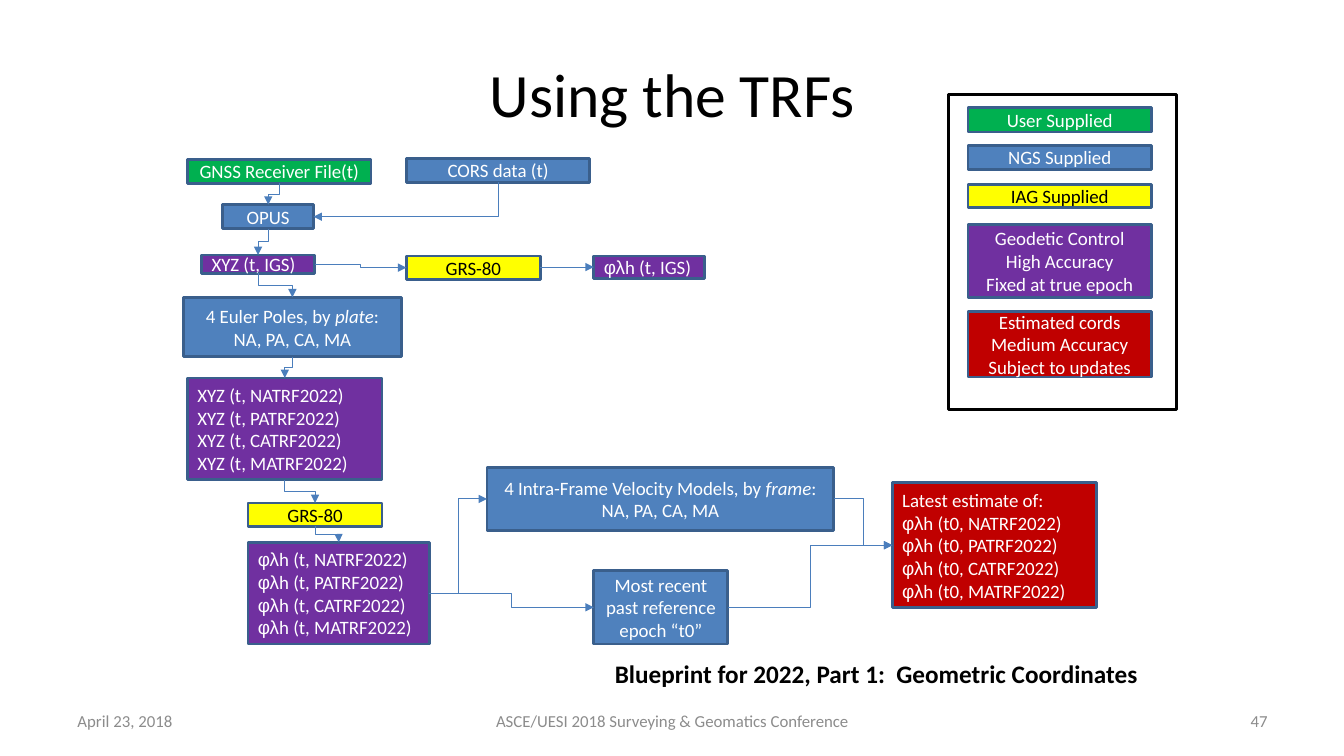
from lxml.etree import SubElement
from pptx import Presentation
from pptx.dml.color import RGBColor
from pptx.enum.shapes import MSO_CONNECTOR as Link, MSO_SHAPE as Shape
from pptx.enum.text import MSO_ANCHOR as Anchor, PP_ALIGN as Align
from pptx.oxml.ns import qn
from pptx.util import Inches, Pt

GREEN = RGBColor(0x00, 0xB0, 0x50)
BLUE = RGBColor(0x4F, 0x81, 0xBD)
YELLOW = RGBColor(0xFF, 0xFF, 0x00)
PURPLE = RGBColor(0x70, 0x30, 0xA0)
RED = RGBColor(0xC0, 0x00, 0x00)
EDGE = RGBColor(0x3A, 0x5F, 0x8C)
ARROW = RGBColor(0x4B, 0x7E, 0xBC)
GREY = RGBColor(0x8C, 0x8C, 0x8C)
BLACK = RGBColor(0x00, 0x00, 0x00)
WHITE = RGBColor(0xFF, 0xFF, 0xFF)

GREEK = "φλ"
ITALIC = ("plate", "frame")
FRAMES = ("NATRF2022", "PATRF2022", "CATRF2022", "MATRF2022")
PLATES = "NA, PA, CA, MA"

# Columns shared by several boxes, in inches
COL_A, COL_B, COL_C, COL_D = 1.86, 2.46, 4.03, 5.89
LEGEND_COL, WIDE, NARROW = 9.6, 1.82, 1.33

# name: (left, top, width, height), fill, alignment, lines ("|" parts the runs)
BOXES = {
    "receiver": ((COL_A, 1.58, WIDE, 0.24), GREEN, Align.CENTER, ["GNSS Receiver File(t)"]),
    "opus": ((2.21, 2.03, 0.9, 0.24), BLUE, Align.CENTER, ["OPUS"]),
    "xyz igs": ((2, 2.53, 1.12, 0.18), PURPLE, Align.LEFT, ["XYZ (t, IGS)"]),
    "cors": ((COL_C, 1.57, WIDE, 0.24), BLUE, Align.CENTER, ["CORS data (t)"]),
    "euler": ((1.82, 2.95, 2.16, 0.59), BLUE, Align.CENTER,
              ["4 Euler Poles, by |plate|:", PLATES]),
    "xyz frames": ((COL_A, 3.75, 1.93, 1.01), PURPLE, Align.LEFT,
                   [f"XYZ (t, {frame})" for frame in FRAMES]),
    "grs igs": ((COL_C, 2.54, NARROW, 0.23), YELLOW, Align.CENTER, ["GRS-80"]),
    "geo igs": ((COL_D, 2.54, 1.1, 0.22), PURPLE, Align.LEFT, ["φλ|h (t, IGS)"]),
    "grs frames": ((COL_B, 4.99, NARROW, 0.23), YELLOW, Align.CENTER, ["GRS-80"]),
    "latest": ((8.85, 4.79, 2.03, 1.24), RED, Align.LEFT,
               ["Latest estimate of:"] + [f"φλ|h (t0, {frame})" for frame in FRAMES]),
    "velocity": ((4.83, 4.64, 3.44, 0.62), BLUE, Align.CENTER,
                 ["4 Intra-Frame Velocity Models, by |frame|:", PLATES]),
    "geo frames": ((COL_B, 5.38, 1.8, 1.01), PURPLE, Align.LEFT,
                   [f"φλ|h (t, {frame})" for frame in FRAMES]),
    "epoch": ((COL_D, 5.66, NARROW, 0.73), BLUE, Align.CENTER,
              ["Most recent past reference epoch “t0”"]),
}

# top, height, fill, lines
LEGEND = [
    (1.07, 0.24, GREEN, ["User Supplied"]),
    (1.44, 0.24, BLUE, ["NGS Supplied"]),
    (1.83, 0.23, YELLOW, ["IAG Supplied"]),
    (2.23, 0.72, PURPLE, ["Geodetic Control", "High Accuracy", "Fixed at true epoch"]),
    (3.09, 0.65, RED, ["Estimated cords", "Medium Accuracy", "Subject to updates"]),
]
LEGEND_FRAME = (9.41, 0.94, 2.26, 3.12)

DOWN_LINKS = [("receiver", "opus"), ("opus", "xyz igs"), ("xyz igs", "euler"),
              ("euler", "xyz frames"), ("xyz frames", "grs frames"),
              ("grs frames", "geo frames")]
ACROSS_LINKS = [("xyz igs", "grs igs"), ("grs igs", "geo igs"),
                ("geo frames", "velocity"), ("geo frames", "epoch"),
                ("velocity", "latest"), ("epoch", "latest")]

# place, text, size, colour, alignment, bold, anchor, wrap
CAPTIONS = [
    ((0.67, 0.3, 12, 1.25), "Using the TRFs", 44, BLACK, Align.CENTER, False, Anchor.MIDDLE, True),
    ((6, 6.48, 5.43, 0.4), "Blueprint for 2022, Part 1:  Geometric Coordinates", 18, BLACK,
     Align.LEFT, True, Anchor.TOP, False),
    ((0.67, 6.95, 3.11, 0.4), "April 23, 2018", 12, GREY, Align.LEFT, False, Anchor.MIDDLE, True),
    ((4.56, 6.95, 4.22, 0.4), "ASCE/UESI 2018 Surveying & Geomatics Conference", 12, GREY,
     Align.CENTER, False, Anchor.MIDDLE, True),
    ((9.56, 6.95, 3.11, 0.4), "47", 12, GREY, Align.RIGHT, False, Anchor.MIDDLE, True),
]

TOP, LEFT, BOTTOM, RIGHT = range(4)  # connection sites of a rectangle

deck = Presentation()
deck.slide_width, deck.slide_height = Inches(13.33), Inches(7.5)
page = deck.slides.add_slide(deck.slide_layouts[6])


def write(box, lines, size, color, align, bold=False, anchor=Anchor.MIDDLE, wrap=True):
    frame = box.text_frame
    frame.word_wrap, frame.vertical_anchor = wrap, anchor
    for index, line in enumerate(lines):
        para = frame.add_paragraph() if index else frame.paragraphs[0]
        para.alignment = align
        para.font.name, para.font.size, para.font.bold = "Calibri", Pt(size), bold
        para.font.color.rgb = color
        for piece in line.split("|"):
            span = para.add_run()
            span.text = piece
            if piece == GREEK:
                span.font.name = "Arial"
            if piece in ITALIC:
                span.font.italic = True


def add_rectangle(place, edge):
    box = page.shapes.add_shape(Shape.RECTANGLE, *map(Inches, place))
    box.shadow.inherit = False
    box.line.color.rgb, box.line.width = edge, Pt(2)
    return box


def add_box(place, fill, align, lines):
    box = add_rectangle(place, EDGE)
    box.fill.solid()
    box.fill.fore_color.rgb = fill
    write(box, lines, 13.5, BLACK if fill == YELLOW else WHITE, align)
    return box


def add_arrow(start, start_site, end, end_site):
    arrow = page.shapes.add_connector(Link.ELBOW, 0, 0, 0, 0)
    arrow.begin_connect(boxes[start], start_site)
    arrow.end_connect(boxes[end], end_site)
    arrow.line.color.rgb, arrow.line.width = ARROW, Pt(0.75)
    properties = arrow._element.spPr
    SubElement(properties.find(qn("a:ln")), qn("a:tailEnd"), type="triangle")
    SubElement(properties, qn("a:effectLst"))
    if start_site == BOTTOM:  # a downward elbow is a sideways one, turned
        run, drop = arrow.end_x - arrow.begin_x, arrow.end_y - arrow.begin_y
        middle_x, middle_y = arrow.begin_x + run // 2, arrow.begin_y + drop // 2
        arrow.width, arrow.height = drop, abs(run)
        arrow.left, arrow.top = middle_x - drop // 2, middle_y - abs(run) // 2
        turn = properties.find(qn("a:xfrm"))
        turn.set("rot", str((270 if run > 0 else 90) * 60000))
        turn.set("flipH", "1" if run > 0 else "0")
    if end_site == RIGHT:  # a single corner
        properties.find(qn("a:prstGeom")).set("prst", "bentConnector2")


# Flow chart
boxes = {name: add_box(*box) for name, box in BOXES.items()}
for start, end in DOWN_LINKS:
    add_arrow(start, BOTTOM, end, TOP)
for start, end in ACROSS_LINKS:
    add_arrow(start, RIGHT, end, LEFT)
add_arrow("cors", BOTTOM, "opus", RIGHT)

# Legend
for top, height, fill, lines in LEGEND:
    add_box((LEGEND_COL, top, WIDE, height), fill, Align.CENTER, lines)
add_rectangle(LEGEND_FRAME, BLACK).fill.background()

# Title, caption and footer
for place, text, *style in CAPTIONS:
    write(page.shapes.add_textbox(*map(Inches, place)), [text], *style)

deck.save("out.pptx")
